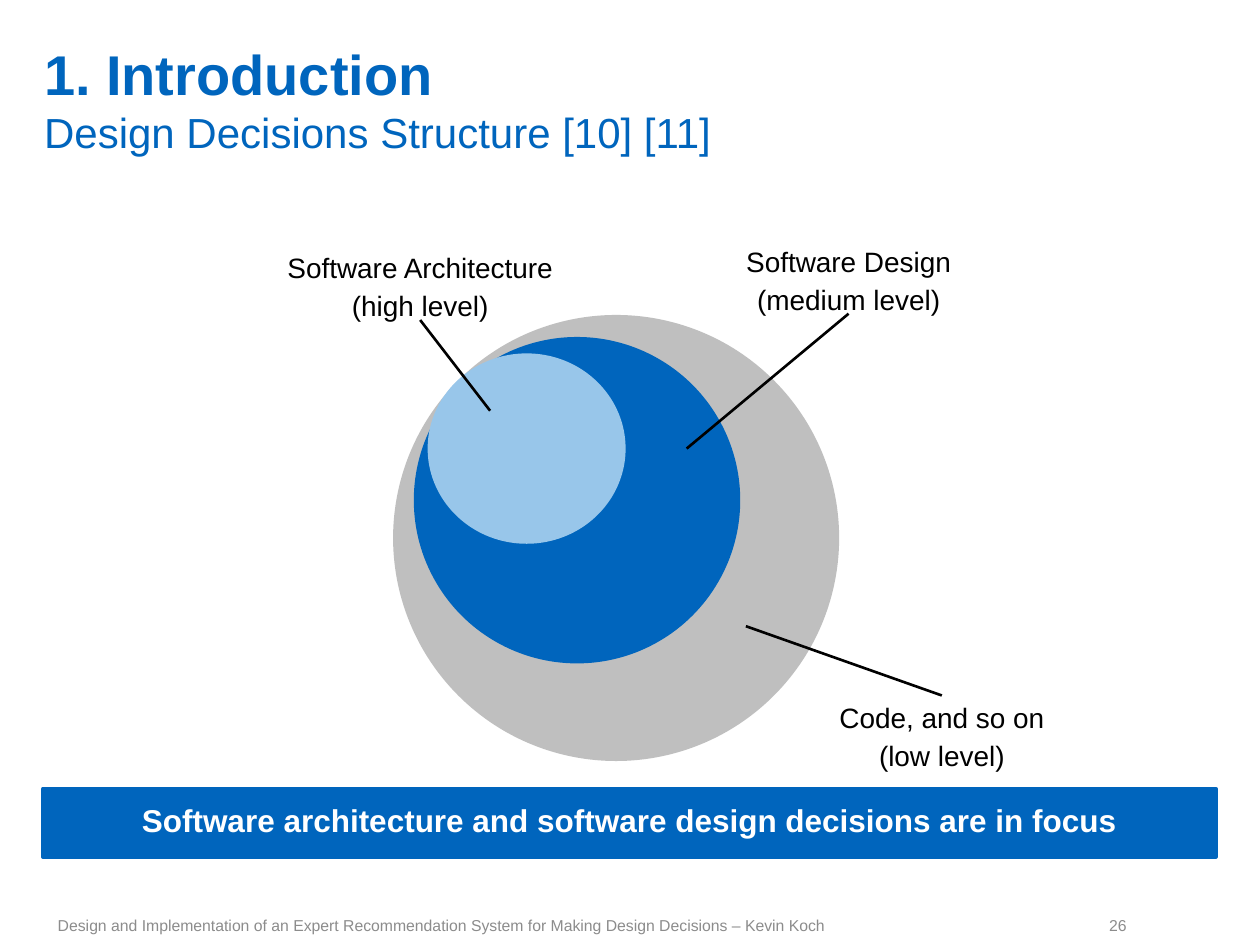
"""Build the slide on the structure of design decisions."""
from lxml import etree
from pptx import Presentation, util as u
from pptx.dml.color import RGBColor
from pptx.enum import shapes, text
from pptx.oxml.ns import qn

COLORS = {"blue": "0065BD", "light": "98C6EA", "grey": "BFBFBF",
          "muted": "8C8C8C", "black": "000000", "white": "FFFFFF"}
COLUMNS, ROWS = 100, 75
CELL = u.Inches(10) / COLUMNS
LEFT, CENTER, RIGHT = text.PP_ALIGN.LEFT, text.PP_ALIGN.CENTER, text.PP_ALIGN.RIGHT
TOP, MIDDLE = text.MSO_ANCHOR.TOP, text.MSO_ANCHOR.MIDDLE

TITLE = [("1. Introduction", 32, True),
         ("Design Decisions Structure [10] [11]", 24, False)]
TITLE_BOX = (3.5, 3.1, 85.7, 9.4)
CIRCLES = [
    ((31.2, 25, 35.4, 35.4), "grey", 0),
    ((33, 26.9, 25.6, 25.6), "blue", 2.25),
    ((34.1, 28.2, 15.4, 14.8), "light", 2.25),
]
LABELS = [
    (["Software Architecture", "(high level)"], (21.2, 19.5, 24.3, 5.9), 2, (38.9, 32.6)),
    (["Software Design", "(medium level)"], (55.9, 19, 22.9, 5.9), 2, (54.5, 35.6)),
    (["Code, and so on", "(low level)"], (64, 55.2, 21.5, 5.9), 0, (59.2, 49.7)),
]
BANNER = "Software architecture and software design decisions are in focus"
BANNER_BOX = (3.4, 62.6, 93.1, 5.4)
FOOTERS = [
    ("Design and Implementation of an Expert Recommendation System for Making "
     "Design Decisions – Kevin Koch", (3.6, 71.8, 80.1, 3.2), LEFT),
    ("26", (83.7, 71.8, 6.7, 3.2), RIGHT),
]


def grid(*cells):
    return [round(cell * CELL) for cell in cells]


def rgb(name):
    return RGBColor.from_string(COLORS[name])


def write(shape, lines, color, align=LEFT, anchor=TOP, inset=(0, 0), spacing=1.0):
    frame = shape.text_frame
    across, down = (u.Inches(side) for side in inset)
    formats = {"word_wrap": True, "auto_size": text.MSO_AUTO_SIZE.NONE,
               "vertical_anchor": anchor, "margin_left": across,
               "margin_right": across, "margin_top": down, "margin_bottom": down}
    for name, value in formats.items():
        setattr(frame, name, value)
    paragraph = frame.paragraphs[0]
    paragraph.alignment, paragraph.line_spacing = align, spacing
    for index, (words, size, bold) in enumerate(lines):
        if index:
            paragraph.add_line_break()
        run = paragraph.add_run()
        run.text = words
        for name, value in {"name": "Arial", "size": u.Pt(size), "bold": bold}.items():
            setattr(run.font, name, value)
        run.font.color.rgb = rgb(color)


def add_filled(slide, kind, box, color, outline):
    shape = slide.shapes.add_shape(kind, *grid(*box))
    shape.shadow.inherit = False
    shape.fill.solid()
    shape.fill.fore_color.rgb = rgb(color)
    if outline:
        shape.line.color.rgb = rgb(color)
        shape.line.width = u.Pt(outline)
    else:
        shape.line.fill.background()
    return shape


def add_pointer(slide, label, side, target):
    line = slide.shapes.add_connector(shapes.MSO_CONNECTOR.STRAIGHT,
                                      label.left, label.top, *grid(*target))
    line.begin_connect(label, side)
    line.line.color.rgb = rgb("black")
    line.line.width = u.Pt(1.5)
    etree.SubElement(line._element.spPr, qn("a:effectLst"))


def main():
    presentation = Presentation()
    presentation.slide_width, presentation.slide_height = grid(COLUMNS, ROWS)
    slide = presentation.slides.add_slide(presentation.slide_layouts[5])

    title = slide.shapes.title
    title.left, title.top, title.width, title.height = grid(*TITLE_BOX)
    write(title, TITLE, "blue")

    for words, box, align in FOOTERS:
        write(slide.shapes.add_textbox(*grid(*box)), [(words, 9, False)],
              "muted", align, MIDDLE, (0.1, 0.05))

    for box, color, outline in CIRCLES:
        add_filled(slide, shapes.MSO_SHAPE.OVAL, box, color, outline)

    for lines, box, side, target in LABELS:
        label = slide.shapes.add_textbox(*grid(*box))
        write(label, [(line, 16, False) for line in lines], "black", CENTER, spacing=1.14)
        add_pointer(slide, label, side, target)

    banner = add_filled(slide, shapes.MSO_SHAPE.RECTANGLE, BANNER_BOX, "blue", 2.25)
    write(banner, [(BANNER, 18, True)], "white", CENTER, MIDDLE, (0.08, 0.08), 0.9)

    presentation.save("out.pptx")


if __name__ == "__main__":
    main()
